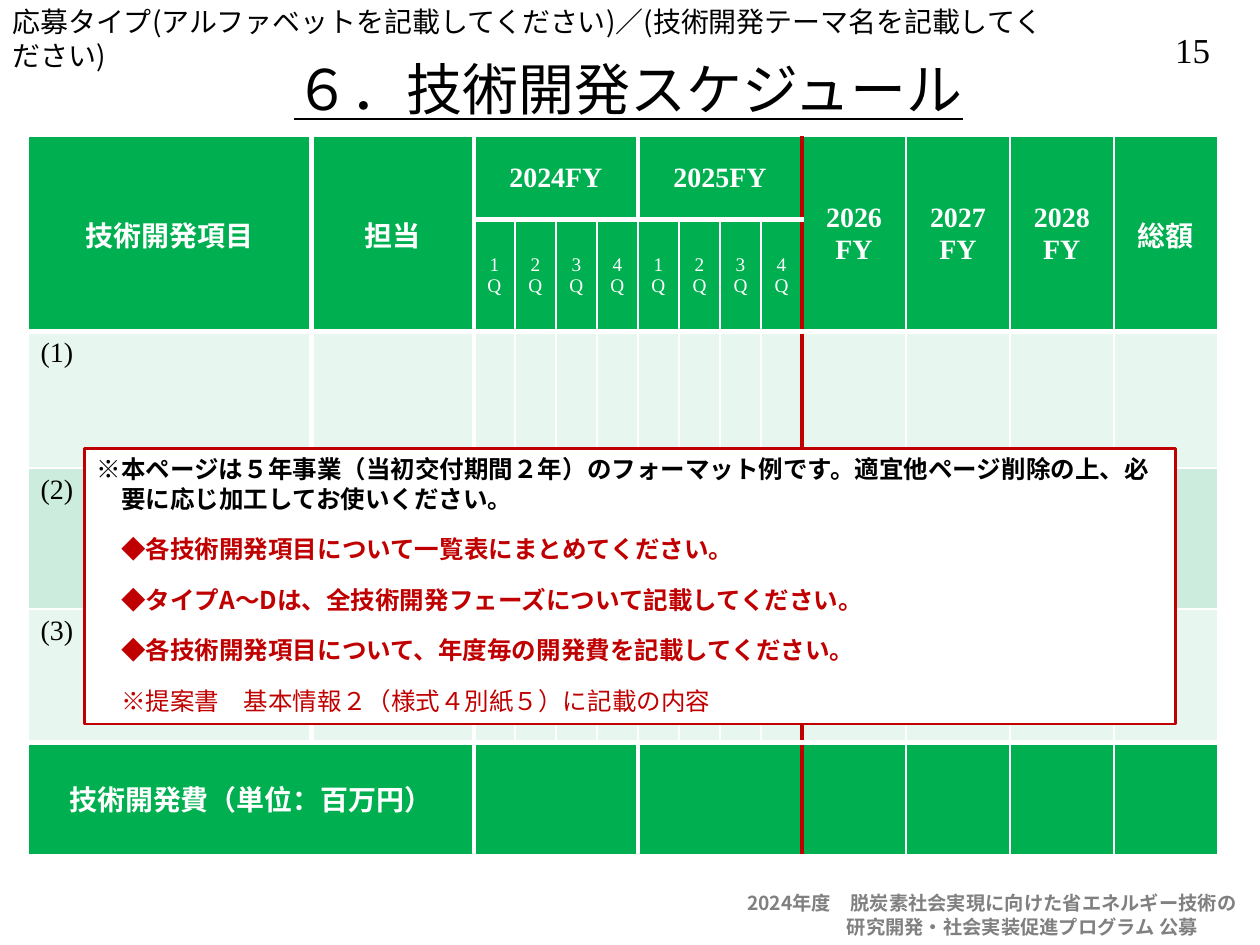
"""Build the technology development schedule slide with its table and guidance note."""
from lxml import etree
from pptx import Presentation
from pptx.dml.color import RGBColor
from pptx.enum.shapes import MSO_SHAPE as Shape
from pptx.enum.text import MSO_ANCHOR as Anchor, MSO_AUTO_SIZE as AutoSize, PP_ALIGN as Align
from pptx.oxml.ns import qn
from pptx.util import Pt

GOTHIC, SERIF = "Noto Sans CJK JP", "Times New Roman"
BLACK, WHITE, GRAY, RED, GREEN = "000000", "FFFFFF", "808080", "C00000", "00B050"


def color(value):
    return RGBColor.from_string(value)


def add_run(paragraph, text, size, fill, bold=False, font=GOTHIC):
    run = paragraph.add_run()
    run.text = text
    run.font.size = Pt(size)
    run.font.bold = bold
    run.font.color.rgb = color(fill)
    run.font.name = font
    properties = run.font._element
    etree.SubElement(properties, qn("a:ea")).set("typeface", GOTHIC)
    return run


presentation = Presentation()
presentation.slide_width, presentation.slide_height = Pt(720), Pt(540)
slide = presentation.slides.add_slide(presentation.slide_layouts[6])

page_number = slide.shapes.add_textbox(Pt(658), Pt(13), Pt(47), Pt(31)).text_frame
page_number.word_wrap = False
page_number.paragraphs[0].alignment = Align.CENTER
add_run(page_number.paragraphs[0], "15", 20, BLACK, font=SERIF)

header = slide.shapes.add_textbox(Pt(0), Pt(-0.7), Pt(605), Pt(26.6)).text_frame
header.word_wrap = True
add_run(header.paragraphs[0], "応募タイプ(アルファベットを記載してください)／(技術開発テーマ名を記載してください)", 16, BLACK)

footer = slide.shapes.add_textbox(Pt(419.8), Pt(506), Pt(300.2), Pt(34)).text_frame
footer.word_wrap = True
add_run(footer.paragraphs[0], "2024年度　脱炭素社会実現に向けた省エネルギー技術の", 11, GRAY, True)
program = footer.add_paragraph()
program._p.get_or_add_pPr().set("marL", str(Pt(57)))
add_run(program, "研究開発・社会実装促進プログラム 公募", 11, GRAY, True)

title = slide.shapes.add_textbox(Pt(53.3), Pt(25.2), Pt(612), Pt(50.4)).text_frame
title.word_wrap = True
title.vertical_anchor = Anchor.MIDDLE
title.paragraphs[0].alignment = Align.CENTER
add_run(title.paragraphs[0], "６．技術開発スケジュール", 32, BLACK).font.underline = True

column_widths = [162, 92.8] + [23.45] * 8 + [59.4] * 4
row_heights = [47.5, 64, 78, 80.6, 76.3, 64]
row_fills = [GREEN, GREEN, "E7F6EF", "CCECDE", "E7F6EF", GREEN]
table = slide.shapes.add_table(
    len(row_heights), len(column_widths), Pt(16), Pt(78), Pt(sum(column_widths)), Pt(sum(row_heights))
).table
table.first_row = table.horz_banding = False
for column, width in zip(table.columns, column_widths):
    column.width = Pt(width)
for row, height in zip(table.rows, row_heights):
    row.height = Pt(height)

for column in (0, 1, 10, 11, 12, 13):
    table.cell(0, column).merge(table.cell(1, column))
for row in (0, 5):
    for column in (2, 6):
        table.cell(row, column).merge(table.cell(row, column + 3))
table.cell(5, 0).merge(table.cell(5, 1))

for row, row_fill in enumerate(row_fills):
    for column in range(len(column_widths)):
        cell = table.cell(row, column)
        right = column + (cell.span_width if cell.is_merge_origin else 1)
        bottom = row + (cell.span_height if cell.is_merge_origin else 1)
        properties = cell._tc.get_or_add_tcPr()
        for side, edge in (("L", column), ("R", right), ("T", row), ("B", bottom)):
            if side in "LR":
                thick = edge in (1, 2, 10) or (edge == 6 and row in (0, 5))
                edge_color = RED if edge == 10 else WHITE
            else:
                thick = edge in (1, 2, 5)
                edge_color = WHITE
            line = etree.SubElement(properties, qn(f"a:ln{side}"), w=str(Pt(3 if thick else 1)))
            etree.SubElement(etree.SubElement(line, qn("a:solidFill")), qn("a:srgbClr"), val=edge_color)
        cell.fill.solid()
        cell.fill.fore_color.rgb = color(row_fill)

headings = {
    (0, 0): ["技術開発項目"], (0, 1): ["担当"], (0, 2): ["2024FY"], (0, 6): ["2025FY"],
    (0, 10): ["2026", "FY"], (0, 11): ["2027", "FY"], (0, 12): ["2028", "FY"], (0, 13): ["総額"],
    (5, 0): ["技術開発費（単位：百万円）"],
}
quarters = {(1, 2 + index): [f"{index % 4 + 1}Q"] for index in range(8)}
for (row, column), lines in (headings | quarters).items():
    cell = table.cell(row, column)
    cell.vertical_anchor = Anchor.MIDDLE
    for index, text in enumerate(lines):
        paragraph = cell.text_frame.add_paragraph() if index else cell.text_frame.paragraphs[0]
        paragraph.alignment = Align.CENTER
        add_run(paragraph, text, 11 if row == 1 else 16, WHITE, row != 1, SERIF)
for number in (1, 2, 3):
    add_run(table.cell(number + 1, 0).text_frame.paragraphs[0], f"({number})", 16, BLACK, font=SERIF)

note = slide.shapes.add_shape(Shape.RECTANGLE, Pt(48.2), Pt(256.2), Pt(623.5), Pt(157.5))
note.shadow.inherit = False
note.fill.solid()
note.fill.fore_color.rgb = color(WHITE)
note.line.color.rgb = color(RED)
note.line.width = Pt(1.5)
note.text_frame.word_wrap = True
note.text_frame.auto_size = AutoSize.SHAPE_TO_FIT_TEXT
note.text_frame.vertical_anchor = Anchor.TOP
guidance = [
    ("※本ページは５年事業（当初交付期間２年）のフォーマット例です。適宜他ページ削除の上、必要に応じ加工してお使いください。", BLACK, True),
    ("◆各技術開発項目について一覧表にまとめてください。", RED, True),
    ("◆タイプA～Dは、全技術開発フェーズについて記載してください。", RED, True),
    ("◆各技術開発項目について、年度毎の開発費を記載してください。", RED, True),
    ("※提案書　基本情報２（様式４別紙５）に記載の内容", RED, False),
]
for index, (text, fill, bold) in enumerate(guidance):
    paragraph = note.text_frame.add_paragraph() if index else note.text_frame.paragraphs[0]
    paragraph.alignment = Align.LEFT
    indents = paragraph._p.get_or_add_pPr()
    indents.set("marL", str(Pt(14)))
    indents.set("indent", str(Pt(0 if index else -14)))
    if index:
        paragraph.space_before = Pt(12)
    add_run(paragraph, text, 14, fill, bold)

presentation.save("out.pptx")
